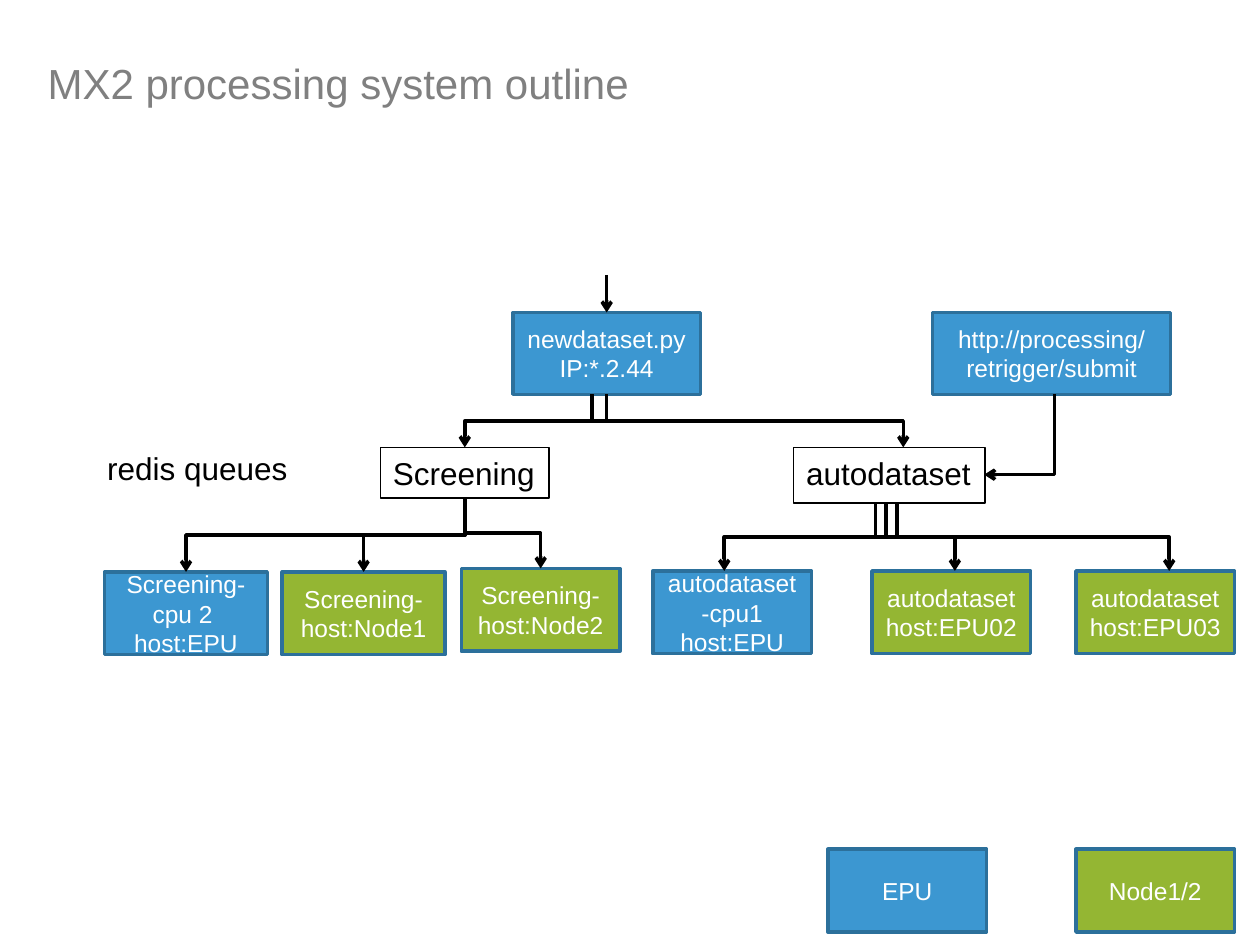
from lxml.etree import SubElement
from pptx import Presentation
from pptx.dml.color import RGBColor
from pptx.enum.shapes import MSO_CONNECTOR, MSO_SHAPE
from pptx.enum.text import MSO_ANCHOR, MSO_AUTO_SIZE, PP_ALIGN
from pptx.oxml.ns import qn
from pptx.util import Cm, Pt

BLUE, GREEN, BORDER = "3C97D1", "94B633", "2C709B"
BLACK, WHITE, GRAY = "000000", "FFFFFF", "808080"
HOST_WIDTH, HOST_HEIGHT = 3.2, 1.67


def color(value):
    return RGBColor.from_string(value)


def write_text(shape, text, size, font_color, align=PP_ALIGN.LEFT):
    shape.text_frame.text = text
    for paragraph in shape.text_frame.paragraphs:
        paragraph.alignment = align
        for run in paragraph.runs:
            run.font.name = "Arial"
            run.font.size = Pt(size)
            run.font.color.rgb = color(font_color)


def add_box(slide, box, text, fill):
    shape = slide.shapes.add_shape(MSO_SHAPE.RECTANGLE, *map(Cm, box))
    shape.shadow.inherit = False
    shape.fill.solid()
    shape.fill.fore_color.rgb = color(fill)
    shape.line.color.rgb = color(BORDER)
    shape.line.width = Pt(2)
    shape.text_frame.word_wrap = True
    shape.text_frame.vertical_anchor = MSO_ANCHOR.MIDDLE
    write_text(shape, text, 14, WHITE, PP_ALIGN.CENTER)
    return shape


def add_label(slide, box, text, outlined=False):
    label = slide.shapes.add_textbox(*map(Cm, box))
    label.text_frame.word_wrap = False
    label.text_frame.auto_size = MSO_AUTO_SIZE.SHAPE_TO_FIT_TEXT
    write_text(label, text, 18, BLACK)
    if outlined:
        label.line.color.rgb = color(BLACK)
        label.line.width = Pt(0.75)


def style_arrow(connector):
    connector.line.color.rgb = color(BLACK)
    connector.line.width = Pt(2)
    line = connector.line._get_or_add_ln()
    SubElement(line, qn("a:tailEnd"), type="arrow")
    SubElement(connector.element.spPr, qn("a:effectLst"))


def add_elbow(slide, start, end, single_bend=False):
    """Elbow that leaves downwards: a horizontal preset turned a quarter."""
    (x1, y1), (x2, y2) = start, end
    length, spread = y2 - y1, abs(x2 - x1)
    left = (x1 + x2 - length) / 2
    top = (y1 + y2 - spread) / 2
    connector = slide.shapes.add_connector(
        MSO_CONNECTOR.ELBOW, Cm(left), Cm(top), Cm(left + length), Cm(top + spread))
    properties = connector.element.spPr
    transform = properties.find(qn("a:xfrm"))
    if x2 < x1:
        transform.set("rot", str(90 * 60000))
    else:
        transform.set("rot", str(270 * 60000))
        transform.set("flipH", "1")
    if single_bend:
        properties.find(qn("a:prstGeom")).set("prst", "bentConnector2")
    style_arrow(connector)


def add_title(slide, box):
    title = slide.shapes.add_textbox(*map(Cm, box))
    title.text_frame.word_wrap = True
    title.text_frame.vertical_anchor = MSO_ANCHOR.MIDDLE
    write_text(title, "MX2 processing system outline", 24, GRAY)


def add_triggers(slide, box):
    """Programs that fill the queues, with their arrows."""
    left, top, width, height = box
    bottom = top + height
    queue_top = bottom + 1.07
    dataset_width, retrigger_width = 3.78, 4.8
    dataset = add_box(slide, (left, top, dataset_width, height),
                      "newdataset.py\nIP:*.2.44", BLUE)
    add_box(slide, (left + width - retrigger_width, top, retrigger_width, height),
            "http://processing/retrigger/submit", BLUE)

    # Incoming arrow
    middle = left + dataset_width / 2
    incoming = slide.shapes.add_connector(
        MSO_CONNECTOR.STRAIGHT, Cm(middle), Cm(top - 0.76), Cm(middle), Cm(top))
    incoming.end_connect(dataset, 0)
    style_arrow(incoming)

    # Arrows to the queues
    add_elbow(slide, (middle, bottom), (left - 0.97, queue_top))
    add_elbow(slide, (left + 1.6, bottom), (left + 7.87, queue_top))
    add_elbow(slide, (left + 10.92, bottom), (left + 9.5, bottom + 1.62), True)


def add_queue(slide, box, name, workers, arrows):
    """Queue with its workers; all offsets count from the queue's corner."""
    left, top, width, height = box
    add_label(slide, box, name, outlined=True)
    for x, y, worker_width, text, fill in workers:
        add_box(slide, (left + x, top + y, worker_width, HOST_HEIGHT), text, fill)
    for (start_x, end_x), worker in zip(arrows, workers):
        add_elbow(slide, (left + start_x, top + height),
                  (left + end_x, top + worker[1]))


def add_legend(slide, box):
    left, top, width, height = box
    add_box(slide, (left, top, HOST_WIDTH, height), "EPU", BLUE)
    add_box(slide, (left + width - HOST_WIDTH, top, HOST_WIDTH, height),
            "Node1/2", GREEN)


def main():
    presentation = Presentation()
    presentation.slide_width, presentation.slide_height = Cm(25.4), Cm(19.05)
    slide = presentation.slides.add_slide(presentation.slide_layouts[6])

    add_title(slide, (0.71, 0.53, 22.86, 2.26))
    add_triggers(slide, (10.34, 6.3, 13.26, 1.65))
    add_label(slide, (1.91, 8.92, 4.19, 1.02), "redis queues")
    add_queue(
        slide, (7.67, 9.02, 3.4, 1.02), "Screening",
        [(-5.56, 2.51, 3.28, "Screening-cpu 2 \nhost:EPU", BLUE),
         (-1.98, 2.51, 3.28, "Screening-host:Node1", GREEN),
         (1.63, 2.44, HOST_WIDTH, "Screening-\nhost:Node2", GREEN)],
        [(1.7, -3.92), (1.7, -0.34), (1.7, 3.23)])
    add_queue(
        slide, (16, 9.02, 3.86, 1.12), "autodataset",
        [(-2.84, 2.49, HOST_WIDTH, "autodataset-cpu1\nhost:EPU", BLUE),
         (1.58, 2.49, HOST_WIDTH, "autodataset\nhost:EPU02", GREEN),
         (5.69, 2.49, HOST_WIDTH, "autodataset\nhost:EPU03", GREEN)],
        [(2.08, -1.4), (1.86, 3.25), (1.65, 7.57)])
    add_legend(slide, (16.69, 17.12, 8.2, HOST_HEIGHT))

    presentation.save("out.pptx")


if __name__ == "__main__":
    main()
